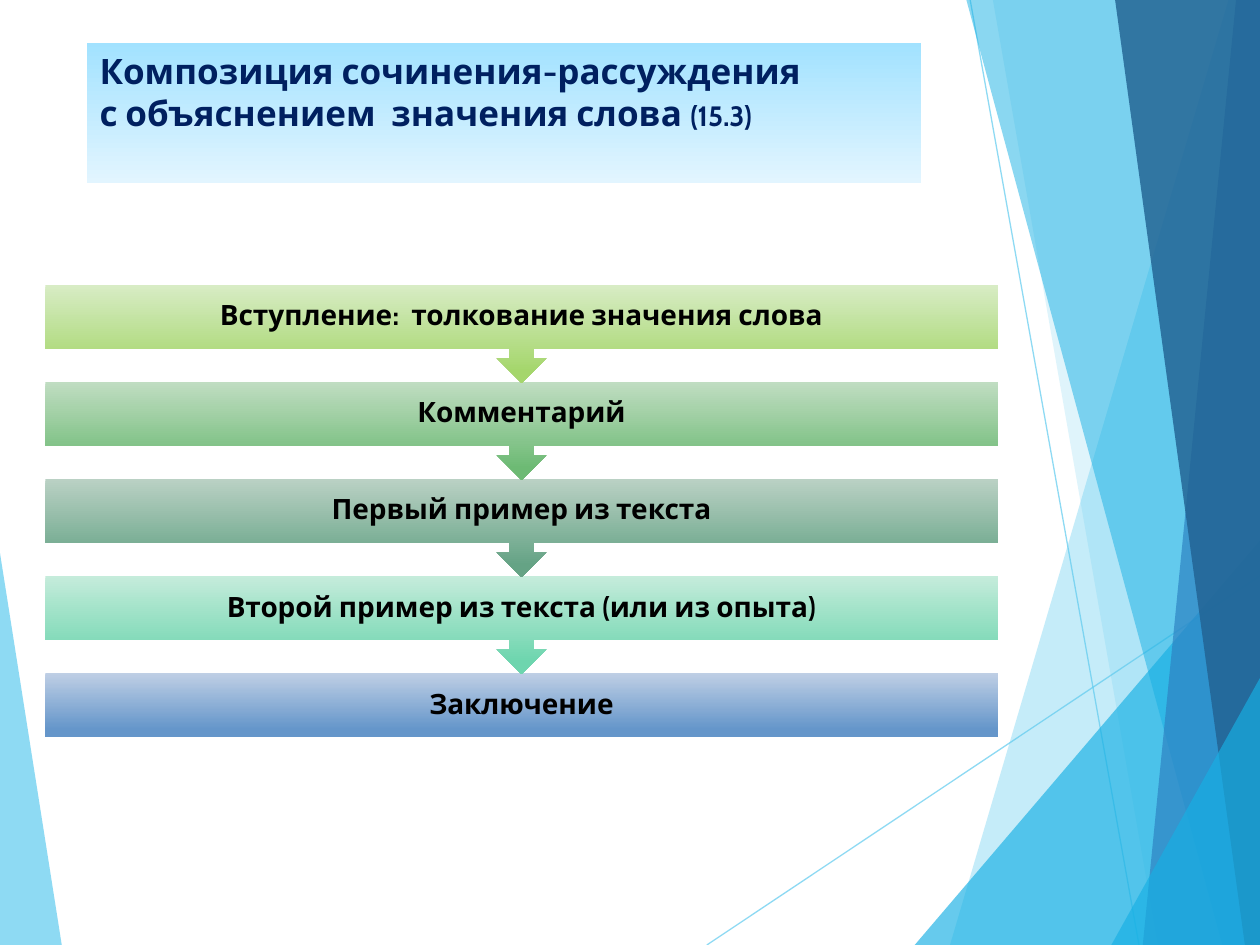
from pptx import Presentation
from pptx.dml.color import RGBColor
from pptx.enum.shapes import MSO_CONNECTOR, MSO_SHAPE
from pptx.enum.text import MSO_ANCHOR as Anchor, MSO_AUTO_SIZE, PP_ALIGN as Align
from pptx.oxml.ns import qn
from pptx.util import Inches, Pt
from lxml import etree

WIDTH, HEIGHT = 10, 7.5
FONT = "Cabin"

# Step column: left edge, first row, row pitch and sizes in inches
LEFT, TOP, PITCH = 0.36, 2.26, 0.77
STEP_WIDTH, BAR_HEIGHT, CALLOUT_HEIGHT = 7.56, 0.51, 0.78
STEPS = [
    ("Вступление:  толкование значения слова", "D8ECC5", "A5D66C"),
    ("Комментарий", "C0DDC2", "6DBA74"),
    ("Первый пример из текста", "BAD1C4", "65A385"),
    ("Второй пример из текста (или из опыта)", "C5ECDB", "6DD5AE"),
    ("Заключение", "BFCFE5", "6596CA"),
]

# Background facets: colour, opacity in percent, corners
LEFT_FACET = ("5FCBEF", 70, [(0, 4.39), (0.49, HEIGHT), (0, HEIGHT)])
RIGHT_FACETS = [
    ("5FCBEF", 36, [(9.75, 0), (7.54, HEIGHT), (WIDTH, HEIGHT), (WIDTH, 0)]),
    ("5FCBEF", 20, [(7.88, 0), (9.19, HEIGHT), (WIDTH, HEIGHT), (WIDTH, 0)]),
    ("17B0E4", 66, [(7.26, HEIGHT), (WIDTH, 4.29), (WIDTH, HEIGHT)]),
    ("17B0E4", 50, [(7.67, 0), (9.7, HEIGHT), (WIDTH, HEIGHT), (WIDTH, 0)]),
    ("2E83C3", 70, [(9.81, 0), (9.07, HEIGHT), (WIDTH, HEIGHT), (WIDTH, 0)]),
    ("226292", 82, [(8.85, 0), (9.88, HEIGHT), (WIDTH, HEIGHT), (WIDTH, 0)]),
    ("17B0E4", 66, [(8.82, HEIGHT), (WIDTH, 5.38), (WIDTH, HEIGHT)]),
]
RAYS = [((5.61, HEIGHT), (WIDTH, 4.57)), ((7.7, 0), (9.04, HEIGHT))]


def color(value):
    return RGBColor.from_string(value)


def set_opacity(fill_parent, percent):
    rgb = next(fill_parent.iter(qn("a:srgbClr")))
    etree.SubElement(rgb, qn("a:alpha")).set("val", str(percent * 1000))


def set_gradient(shape, first, last, end=1.0):
    shape.fill.gradient()
    shape.fill.gradient_angle = 270  # counted anticlockwise: top to bottom
    for stop, value, position in zip(shape.fill.gradient_stops, (first, last), (0, end)):
        stop.color.rgb = color(value)
        stop.position = position


def add_text(paragraph, text, size=16, fill="000000", bold=True):
    run = paragraph.add_run()
    run.text = text
    font = run.font
    font.name, font.size, font.bold = FONT, Pt(size), bold
    font.color.rgb = color(fill)


def add_facet(slide, fill, opacity, corners):
    points = [(Inches(x), Inches(y)) for x, y in corners]
    builder = slide.shapes.build_freeform(*points[0])
    builder.add_line_segments(points[1:], close=True)
    shape = builder.convert_to_shape()
    shape.shadow.inherit = False
    shape.line.fill.background()
    shape.fill.solid()
    shape.fill.fore_color.rgb = color(fill)
    set_opacity(shape.fill._xPr, opacity)


def add_ray(slide, start, end):
    ends = [Inches(value) for value in (*start, *end)]
    ray = slide.shapes.add_connector(MSO_CONNECTOR.STRAIGHT, *ends)
    ray.line.width = Pt(0.75)
    ray.line.color.rgb = color("5FCBEF")
    properties = ray._element.spPr
    set_opacity(properties, 70)
    etree.SubElement(properties, qn("a:effectLst"))


def add_title(slide):
    title = slide.shapes.title
    title.left, title.top = Inches(0.69), Inches(0.34)
    title.width, title.height = Inches(6.62), Inches(1.11)
    set_gradient(title, "A2E2FF", "E2F5FF")
    frame = title.text_frame
    frame.auto_size = MSO_AUTO_SIZE.NONE
    frame.vertical_anchor = Anchor.TOP
    paragraph = frame.paragraphs[0]
    paragraph.alignment = Align.LEFT
    add_text(paragraph, "Композиция сочинения-рассуждения", size=20, fill="002060")
    paragraph.add_line_break()
    add_text(paragraph, "с объяснением  значения слова ", size=20, fill="002060")
    add_text(paragraph, "(15.3)", size=16, fill="002060")


def add_step(slide, row, text, light, dark, is_last):
    left, top, width = Inches(LEFT), Inches(TOP + row * PITCH), Inches(STEP_WIDTH)
    # Bar, with an arrow to the next step
    kind = MSO_SHAPE.RECTANGLE if is_last else MSO_SHAPE.DOWN_ARROW_CALLOUT
    height = BAR_HEIGHT if is_last else CALLOUT_HEIGHT
    bar = slide.shapes.add_shape(kind, left, top, width, Inches(height))
    bar.shadow.inherit = False
    bar.line.fill.background()
    set_gradient(bar, light, dark, end=0.88)
    # Label over the bar
    label = slide.shapes.add_textbox(left, top, width, Inches(BAR_HEIGHT))
    frame = label.text_frame
    frame.word_wrap = True
    frame.vertical_anchor = Anchor.MIDDLE
    frame.margin_left = frame.margin_right = Inches(0.12)
    frame.margin_top = frame.margin_bottom = Inches(0.12)
    paragraph = frame.paragraphs[0]
    paragraph.alignment = Align.CENTER
    paragraph.line_spacing = 0.9
    add_text(paragraph, text)


def main():
    presentation = Presentation()
    presentation.slide_width, presentation.slide_height = Inches(WIDTH), Inches(HEIGHT)
    slide = presentation.slides.add_slide(presentation.slide_layouts[5])

    # Background
    add_facet(slide, *LEFT_FACET)
    for start, end in RAYS:
        add_ray(slide, start, end)
    for facet in RIGHT_FACETS:
        add_facet(slide, *facet)

    # Content, lowest step first so that each arrow lies over the next bar
    add_title(slide)
    last_row = len(STEPS) - 1
    for row, step in reversed(list(enumerate(STEPS))):
        add_step(slide, row, *step, is_last=row == last_row)

    presentation.save("out.pptx")


if __name__ == "__main__":
    main()
